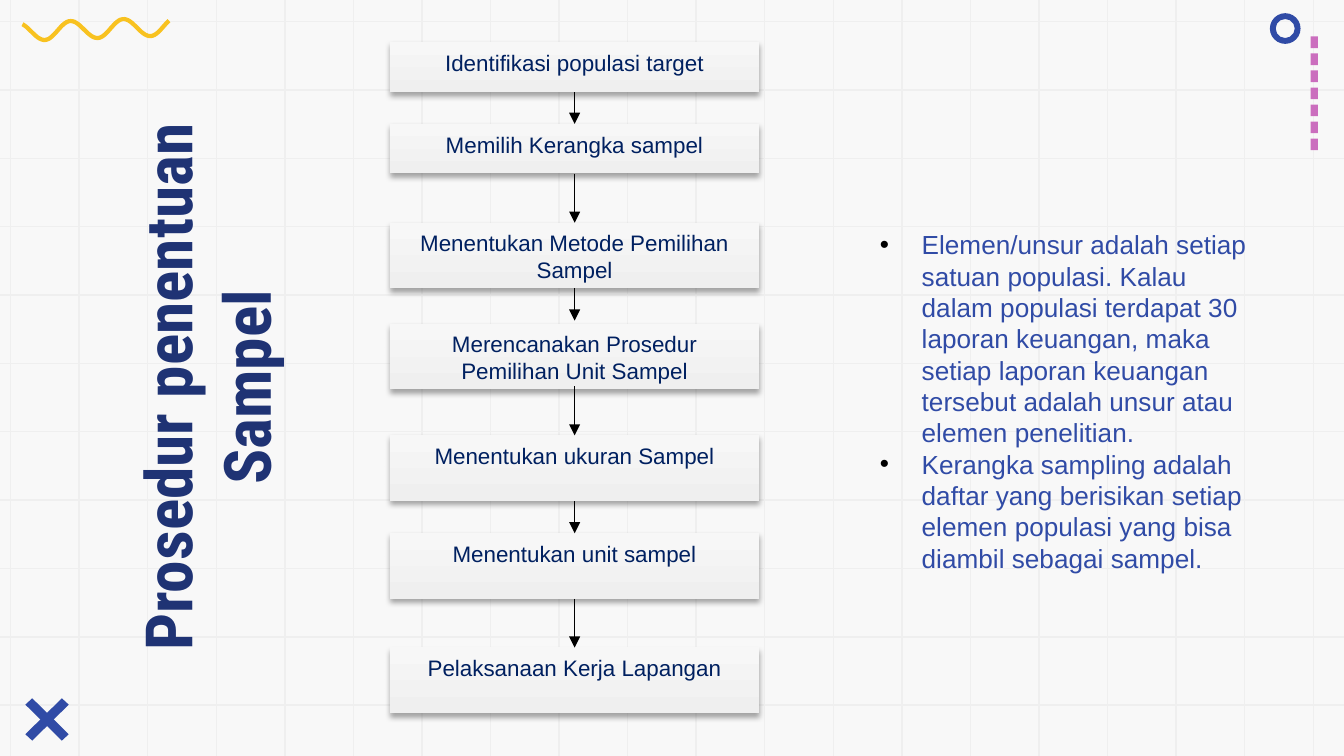
from dataclasses import dataclass
from math import atan, cos, pi, sin

from lxml.etree import SubElement
from pptx import Presentation
from pptx.dml.color import RGBColor
from pptx.enum.shapes import MSO_CONNECTOR, MSO_SHAPE
from pptx.enum.text import MSO_ANCHOR, PP_ALIGN
from pptx.oxml.ns import qn
from pptx.util import Cm, Pt

WIDTH, HEIGHT = 25.4, 14.29


@dataclass(frozen=True)
class Theme:
    background: str = "F8F8F8"
    grid: str = "EFEFEF"
    box_bottom: str = "EFEFEF"
    box_top: str = "F7F7F7"
    box_text: str = "002060"
    title: str = "1F3374"
    blue: str = "304BA6"
    pink: str = "CB6EBE"
    yellow: str = "F8C220"
    black: str = "000000"
    body_font: str = "Arial"
    title_font: str = "Roboto Condensed"
    title_size: float = 35
    body_size: float = 14
    box_size: float = 12
    line_width: float = 0.75


@dataclass(frozen=True)
class Step:
    """A box of the flow; arrow_shift moves the arrow ends that meet it."""
    text: str
    top: float
    height: float = 1.24
    arrow_shift: float = 0


THEME = Theme()
BOX_LEFT, BOX_WIDTH = 7.37, 6.98
STEPS = [
    Step("Identifikasi populasi target", 0.8, 0.94),
    Step("Memilih Kerangka sampel", 2.34, 0.94),
    Step("Menentukan Metode Pemilihan Sampel", 4.21),
    Step("Merencanakan Prosedur Pemilihan Unit Sampel", 6.12, arrow_shift=-0.06),
    Step("Menentukan ukuran Sampel", 8.23),
    Step("Menentukan unit sampel", 10.08),
    Step("Pelaksanaan Kerja Lapangan", 12.24),
]
NOTES = [
    "Elemen/unsur adalah setiap satuan populasi. Kalau dalam populasi terdapat 30 "
    "laporan keuangan, maka setiap laporan keuangan tersebut adalah unsur atau "
    "elemen penelitian.",
    "Kerangka sampling adalah daftar yang berisikan setiap elemen populasi yang "
    "bisa diambil sebagai sampel.",
]


def rgb(color: str) -> RGBColor:
    return RGBColor.from_string(color)


def spaced(first: float, last: float, count: int) -> list[float]:
    return [first + (last - first) * index / (count - 1) for index in range(count)]


def paint(shape, color: str) -> None:
    """Give a flat fill with no outline and no shadow."""
    shape.shadow.inherit = False
    shape.line.fill.background()
    shape.fill.solid()
    shape.fill.fore_color.rgb = rgb(color)


def style_text(paragraph, font: str, size: float, color: str, bold: bool = False) -> None:
    for run in paragraph.runs:
        run.font.name = font
        run.font.size = Pt(size)
        run.font.bold = bold
        run.font.color.rgb = rgb(color)


def set_margins(text_frame, horizontal: float, vertical: float) -> None:
    text_frame.margin_left = text_frame.margin_right = Cm(horizontal)
    text_frame.margin_top = text_frame.margin_bottom = Cm(vertical)


def draw_line(slide, start: tuple, end: tuple, color: str, arrow: bool = False) -> None:
    line = slide.shapes.add_connector(
        MSO_CONNECTOR.STRAIGHT, *(Cm(value) for value in (*start, *end)))
    line.line.color.rgb = rgb(color)
    line.line.width = Pt(THEME.line_width)
    if arrow:
        SubElement(line.line._get_or_add_ln(), qn("a:tailEnd"), type="triangle")
    SubElement(line._element.spPr, qn("a:effectLst"))


def draw_polygon(slide, points: list[tuple], color: str):
    corners = [(Cm(x), Cm(y)) for x, y in points]
    builder = slide.shapes.build_freeform(*corners[0])
    builder.add_line_segments(corners[1:], close=True)
    shape = builder.convert_to_shape()
    paint(shape, color)
    return shape


def draw_grid(slide) -> None:
    for y in spaced(0.41, 13.33, 11):
        draw_line(slide, (0, y), (WIDTH, y), THEME.grid)
    for x in spaced(0.2, 24.82, 20):
        draw_line(slide, (x, 0), (x, HEIGHT), THEME.grid)


def draw_wave(slide) -> None:
    """Draw a ribbon of even thickness along a cosine curve."""
    middle, amplitude, trough, half_period, half_thickness = 0.55, 0.17, 0.84, 0.5, 0.04
    upper, lower = [], []
    for x in spaced(0.43, 3.2, 80):
        phase = pi * (x - trough) / half_period
        y = middle + amplitude * cos(phase)
        angle = atan(-amplitude * pi / half_period * sin(phase))
        shift_x, shift_y = half_thickness * sin(angle), half_thickness * cos(angle)
        upper.append((x + shift_x, y - shift_y))
        lower.append((x - shift_x, y + shift_y))
    wave = draw_polygon(slide, upper + lower[::-1], THEME.yellow)
    wave.rotation = 357.9


def draw_decorations(slide) -> None:
    for top in spaced(0.69, 2.62, 7):
        dash = slide.shapes.add_shape(
            MSO_SHAPE.RECTANGLE, Cm(24.77), Cm(top), Cm(0.14), Cm(0.22))
        paint(dash, THEME.pink)
    left, right = 0.48, 1.3
    bar = [(0.61, 13.2), (left, 13.32), (1.17, 14), (right, 13.88)]
    mirrored_bar = [(left + right - x, y) for x, y in bar]
    for points in (bar, mirrored_bar):
        draw_polygon(slide, points, THEME.blue)
    draw_wave(slide)
    ring = slide.shapes.add_shape(MSO_SHAPE.DONUT, Cm(24), Cm(0.25), Cm(0.58), Cm(0.58))
    ring.adjustments[0] = 0.19
    paint(ring, THEME.blue)


def draw_step(slide, step: Step) -> None:
    box = slide.shapes.add_shape(
        MSO_SHAPE.RECTANGLE, Cm(BOX_LEFT), Cm(step.top), Cm(BOX_WIDTH), Cm(step.height))
    box.line.fill.background()
    box.fill.gradient()
    box.fill.gradient_angle = 90
    for stop, color in zip(box.fill.gradient_stops, (THEME.box_bottom, THEME.box_top)):
        stop.color.rgb = rgb(color)
    effects = SubElement(box._element.spPr, qn("a:effectLst"))
    shadow = SubElement(effects, qn("a:outerShdw"), blurRad=str(Pt(3.1)),
                        dist=str(Pt(1.8)), dir="5400000", rotWithShape="0")
    shadow_color = SubElement(shadow, qn("a:srgbClr"), val=THEME.black)
    SubElement(shadow_color, qn("a:alpha"), val="35000")
    text_frame = box.text_frame
    text_frame.word_wrap = True
    text_frame.vertical_anchor = MSO_ANCHOR.TOP
    set_margins(text_frame, 0.25, 0.13)
    text_frame.text = step.text
    paragraph = text_frame.paragraphs[0]
    paragraph.alignment = PP_ALIGN.CENTER
    style_text(paragraph, THEME.body_font, THEME.box_size, THEME.box_text)


def draw_flow(slide) -> None:
    for step in STEPS:
        draw_step(slide, step)
    center = BOX_LEFT + BOX_WIDTH / 2
    for step, following in zip(STEPS, STEPS[1:]):
        start = step.top + step.height + step.arrow_shift
        end = following.top + following.arrow_shift
        draw_line(slide, (center, start), (center, end), THEME.black, arrow=True)


def draw_title(slide) -> None:
    title = slide.shapes.add_textbox(Cm(-1.98), Cm(5.44), Cm(11.73), Cm(3.76))
    title.rotation = 270
    text_frame = title.text_frame
    text_frame.word_wrap = True
    text_frame.vertical_anchor = MSO_ANCHOR.MIDDLE
    set_margins(text_frame, 0.25, 0.25)
    text_frame.text = "Prosedur penentuan Sampel"
    paragraph = text_frame.paragraphs[0]
    paragraph.alignment = PP_ALIGN.CENTER
    style_text(paragraph, THEME.title_font, THEME.title_size, THEME.title, bold=True)


def draw_notes(slide) -> None:
    notes = slide.shapes.add_textbox(Cm(16.38), Cm(4.19), Cm(7.77), Cm(6.83))
    text_frame = notes.text_frame
    text_frame.word_wrap = True
    set_margins(text_frame, 0.25, 0.13)
    text_frame.text = "\n".join(NOTES)
    for paragraph in text_frame.paragraphs:
        style_text(paragraph, THEME.body_font, THEME.body_size, THEME.blue)
        properties = paragraph._p.get_or_add_pPr()
        properties.set("marL", str(Cm(0.79)))
        properties.set("indent", str(Cm(-0.79)))
        bullet_color = SubElement(properties, qn("a:buClr"))
        SubElement(bullet_color, qn("a:srgbClr"), val=THEME.black)
        SubElement(properties, qn("a:buFont"), typeface=THEME.body_font)
        SubElement(properties, qn("a:buChar"), char="•")


def main() -> None:
    presentation = Presentation()
    presentation.slide_width, presentation.slide_height = Cm(WIDTH), Cm(HEIGHT)
    slide = presentation.slides.add_slide(presentation.slide_layouts[6])
    slide.background.fill.solid()
    slide.background.fill.fore_color.rgb = rgb(THEME.background)
    for draw in (draw_grid, draw_decorations, draw_flow, draw_title, draw_notes):
        draw(slide)
    presentation.save("out.pptx")


if __name__ == "__main__":
    main()
